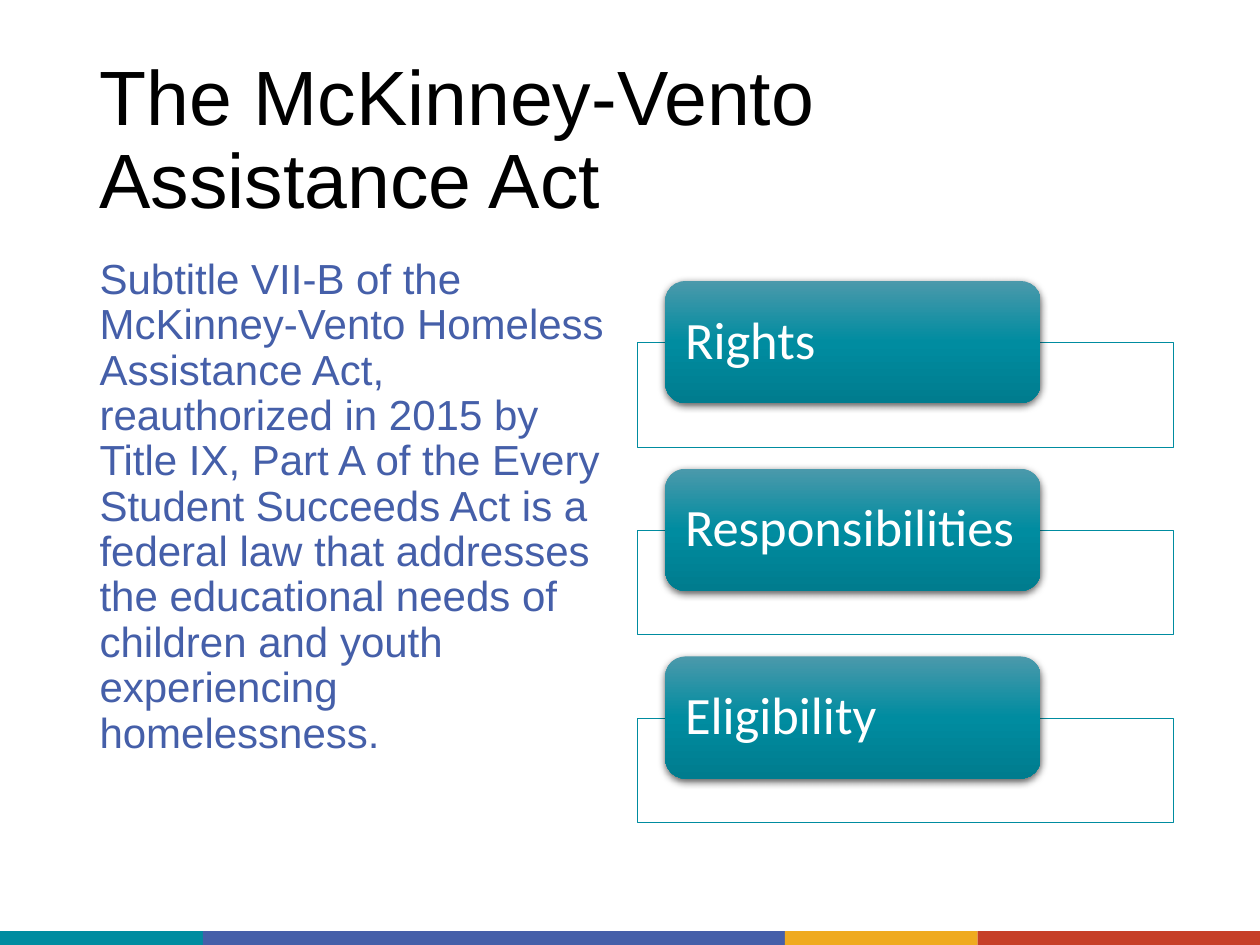
from typing import NamedTuple

from lxml import etree
from pptx import Presentation
from pptx import util as u
from pptx.dml.color import RGBColor
from pptx.enum import shapes, text
from pptx.oxml import parse_xml
from pptx.oxml.ns import nsdecls, qn

TEAL = RGBColor(0x00, 0x8C, 0xA0)
LIGHT_TEAL = RGBColor(0x4B, 0x99, 0xAB)
DARK_TEAL = RGBColor(0x00, 0x7C, 0x8E)
BLUE = RGBColor(0x45, 0x5F, 0xA9)
AMBER = RGBColor(0xEF, 0xAA, 0x1F)
RED = RGBColor(0xC6, 0x3F, 0x28)
WHITE = RGBColor(0xFF, 0xFF, 0xFF)
BLACK = RGBColor(0x00, 0x00, 0x00)


class Box(NamedTuple):
    left: float
    top: float
    width: float
    height: float

    def lengths(self):
        return [u.Inches(value) for value in self]


class Stripe(NamedTuple):
    width: float
    color: RGBColor


STRIPES = [Stripe(1.61, TEAL), Stripe(4.62, BLUE), Stripe(1.53, AMBER), Stripe(2.24, RED)]
TOPICS = ["Rights", "Responsibilities", "Eligibility"]
TOPIC_TOP, TOPIC_STEP = 2.23, 1.49

TITLE_FORMAT = {"name": "Arial", "size": u.Pt(44)}
BODY_FORMAT = {"name": "Arial", "size": u.Pt(24)}
TOPIC_FORMAT = {"name": "Calibri", "size": u.Pt(30)}


def add_shape(slide, kind, box: Box):
    shape = slide.shapes.add_shape(kind, *box.lengths())
    shape.shadow.inherit = False
    shape.line.fill.background()
    return shape


def add_filled_rectangle(slide, box: Box, color: RGBColor):
    shape = add_shape(slide, shapes.MSO_SHAPE.RECTANGLE, box)
    shape.fill.solid()
    shape.fill.fore_color.rgb = color
    return shape


def format_text(frame, content: str, font_format: dict, color: RGBColor, anchor) -> None:
    frame.text = content
    frame.word_wrap = True
    frame.auto_size = text.MSO_AUTO_SIZE.NONE
    frame.vertical_anchor = anchor
    paragraph = frame.paragraphs[0]
    paragraph.alignment = text.PP_ALIGN.LEFT
    paragraph.line_spacing = 0.9
    paragraph.space_before = u.Pt(0)
    for run in paragraph.runs:
        for name, value in font_format.items():
            setattr(run.font, name, value)
        run.font.color.rgb = color


def fill_placeholder(shape, box: Box, content: str, font_format: dict, color: RGBColor, anchor) -> None:
    shape.left, shape.top, shape.width, shape.height = box.lengths()
    format_text(shape.text_frame, content, font_format, color, anchor)


def remove_bullet(paragraph) -> None:
    properties = paragraph._p.get_or_add_pPr()
    properties.set("marL", "0")
    properties.set("indent", "0")
    etree.SubElement(properties, qn("a:buNone"))


def add_gradient_and_shadow(shape) -> None:
    stops = "".join(
        f'<a:gs pos="{position}"><a:srgbClr val="{color}"/></a:gs>'
        for position, color in [(0, LIGHT_TEAL), (50000, TEAL), (100000, DARK_TEAL)]
    )
    gradient = parse_xml(
        f'<a:gradFill {nsdecls("a")} rotWithShape="1"><a:gsLst>{stops}</a:gsLst>'
        '<a:lin ang="5400000" scaled="0"/></a:gradFill>'
    )
    shadow = parse_xml(
        f'<a:outerShdw {nsdecls("a")} blurRad="{u.Pt(4.5)}" dist="{u.Pt(1.5)}" dir="5400000" '
        'algn="ctr" rotWithShape="0"><a:srgbClr val="000000"><a:alpha val="63000"/></a:srgbClr></a:outerShdw>'
    )
    properties = shape._element.spPr
    properties.find(qn("a:ln")).addprevious(gradient)
    properties.find(qn("a:effectLst")).append(shadow)


def add_topic(slide, label: str, top: float) -> None:
    """Draw an outlined panel with a rounded label over its upper edge."""
    panel = add_filled_rectangle(slide, Box(5.06, top + 0.49, 4.25, 0.83), WHITE)
    fill_color = panel._element.spPr.find(qn("a:solidFill"))[0]
    etree.SubElement(fill_color, qn("a:alpha"), val="90000")
    panel.line.color.rgb = TEAL
    panel.line.width = u.Pt(0.5)

    tab = add_shape(slide, shapes.MSO_SHAPE.ROUNDED_RECTANGLE, Box(5.28, top, 2.98, 0.97))
    add_gradient_and_shadow(tab)
    frame = tab.text_frame
    format_text(frame, label, TOPIC_FORMAT, WHITE, text.MSO_ANCHOR.MIDDLE)
    frame.margin_left = frame.margin_right = u.Inches(0.11)
    frame.margin_top = frame.margin_bottom = 0


def main() -> None:
    presentation = Presentation()
    presentation.slide_width, presentation.slide_height = u.Inches(10), u.Inches(7.5)
    slide = presentation.slides.add_slide(presentation.slide_layouts[1])

    left = 0.0
    for stripe in STRIPES:
        add_filled_rectangle(slide, Box(left, 7.39, stripe.width, 0.11), stripe.color)
        left += stripe.width

    fill_placeholder(
        slide.shapes.title, Box(0.69, 0.4, 8.62, 1.45),
        "The McKinney-Vento \vAssistance Act",
        TITLE_FORMAT, BLACK, text.MSO_ANCHOR.MIDDLE,
    )
    body = slide.placeholders[1]
    fill_placeholder(
        body, Box(0.69, 2, 4.25, 4.76),
        "Subtitle VII-B of the McKinney-Vento Homeless Assistance Act, reauthorized in 2015 "
        "by Title IX, Part A of the Every Student Succeeds Act is a federal law that addresses "
        "the educational needs of children and youth experiencing homelessness.",
        BODY_FORMAT, BLUE, text.MSO_ANCHOR.TOP,
    )
    remove_bullet(body.text_frame.paragraphs[0])

    for index, label in enumerate(TOPICS):
        add_topic(slide, label, TOPIC_TOP + index * TOPIC_STEP)

    presentation.save("out.pptx")


if __name__ == "__main__":
    main()
